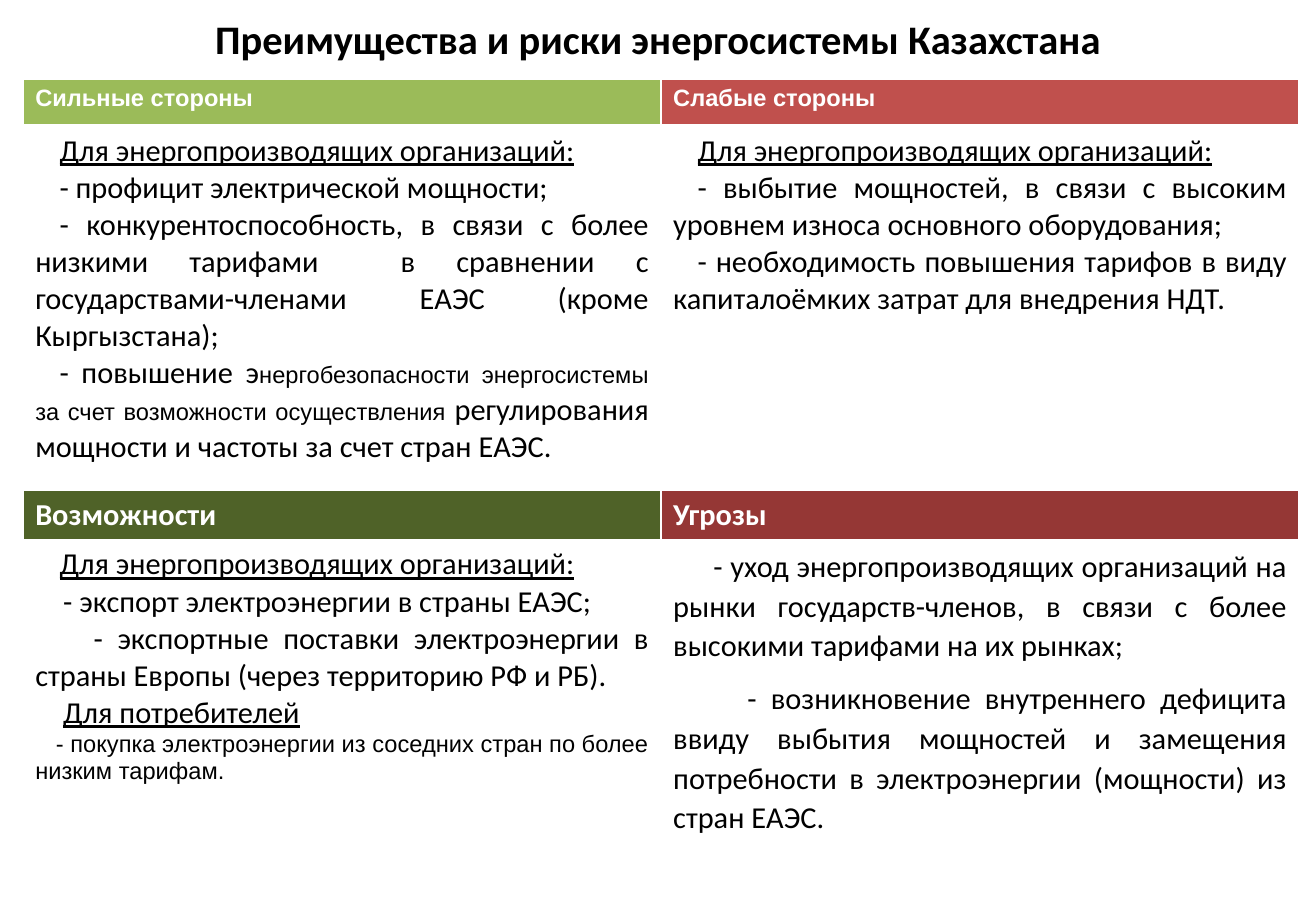
from lxml.etree import SubElement
from pptx import Presentation
from pptx.dml.color import RGBColor
from pptx.enum.text import MSO_ANCHOR, PP_ALIGN
from pptx.oxml.ns import qn
from pptx.util import Pt

EMU_PER_PX = 9144  # 100 px to the inch
WHITE, BLACK = "FFFFFF", "000000"
PRODUCERS = "Для энергопроизводящих организаций:"
SMALL = {"size": 14, "font": "Arial"}
UNDERLINED = {"underline": True}
INDENT = 20


def px(length):
    return int(length * EMU_PER_PX)


def color(hex_string):
    return RGBColor.from_string(hex_string)


def write(paragraph, text, size=18, font="Calibri", fill=BLACK, bold=False, underline=False):
    run = paragraph.add_run()
    run.text = text
    run.font.size = Pt(size)
    run.font.name = font
    run.font.bold = bold
    run.font.underline = underline
    run.font.color.rgb = color(fill)


def space_out(paragraph):
    paragraph.line_spacing = 1.07
    paragraph.space_after = Pt(8)


def style_cell(cell, fill, bottom_width=1):
    # Borders come before the fill in the cell properties
    properties = cell._tc.get_or_add_tcPr()
    for side, width in (("L", 1), ("R", 1), ("T", 1), ("B", bottom_width)):
        border = SubElement(properties, qn(f"a:ln{side}"), w=str(Pt(width)))
        paint = SubElement(border, qn("a:solidFill"))
        SubElement(paint, qn("a:srgbClr"), val=WHITE)
    cell.fill.solid()
    cell.fill.fore_color.rgb = color(fill)


def fill_heading(cell, text, fill, bottom_width=1, **text_format):
    style_cell(cell, fill, bottom_width)
    write(cell.text_frame.paragraphs[0], text, fill=WHITE, bold=True, **text_format)


def fill_points(cell, points, spaced=False):
    style_cell(cell, WHITE)
    frame = cell.text_frame
    for number, (indent, *runs) in enumerate(points):
        point = frame.add_paragraph() if number else frame.paragraphs[0]
        point.alignment = PP_ALIGN.JUSTIFY
        point._p.get_or_add_pPr().set("indent", str(px(indent)))
        if spaced:
            space_out(point)
        for text, text_format in runs:
            write(point, text, **text_format)


# Each point: first-line indent, then its runs
STRENGTHS = [
    (INDENT, (PRODUCERS, UNDERLINED)),
    (INDENT, ("- профицит электрической мощности;", {})),
    (INDENT, ("- конкурентоспособность, в связи с более низкими тарифами  в сравнении с "
              "государствами-членами ЕАЭС (кроме Кыргызстана);", {})),
    (INDENT, ("- повышение э", {}),
     ("нергобезопасности энергосистемы за счет возможности осуществления ", SMALL),
     ("регулирования мощности и частоты за счет стран ЕАЭС.", {})),
]
WEAKNESSES = [
    (INDENT, (PRODUCERS, UNDERLINED)),
    (INDENT, ("- выбытие мощностей, в связи с высоким уровнем износа основного "
              "оборудования;", {})),
    (INDENT, ("- необходимость повышения тарифов в виду капиталоёмких затрат для "
              "внедрения НДТ.", {})),
]
OPPORTUNITIES = [
    (INDENT, (PRODUCERS, UNDERLINED)),
    (23, ("- экспорт электроэнергии в страны ЕАЭС;", {})),
    (48, ("- экспортные поставки электроэнергии в страны Европы "
          "(через территорию РФ и РБ).", {})),
    (23, ("Для потребителей", UNDERLINED)),
    (17, ("- покупка электроэнергии из соседних стран по более низким тарифам.", SMALL)),
]
THREATS = [
    (33, ("- уход энергопроизводящих организаций на рынки государств-членов, в связи с "
          "более высокими тарифами на их рынках;", {})),
    (61, ("- возникновение внутреннего дефицита ввиду выбытия мощностей и замещения "
          "потребности в электроэнергии (мощности) из стран ЕАЭС.", {})),
]


def place_title(slide, left, top, width, height):
    title = slide.shapes.title
    title.left, title.top, title.width, title.height = map(px, (left, top, width, height))
    frame = title.text_frame
    frame.word_wrap = True
    frame.vertical_anchor = MSO_ANCHOR.MIDDLE
    heading = frame.paragraphs[0]
    heading.alignment = PP_ALIGN.CENTER
    space_out(heading)
    write(heading, "Преимущества и риски энергосистемы Казахстана", size=24, bold=True)


def place_swot(slide, left, top, width):
    row_heights = (39, 300, 39, 236, 39)
    swot = slide.shapes.add_table(len(row_heights), 2, px(left), px(top),
                                  px(width), px(sum(row_heights))).table
    swot.first_row = swot.horz_banding = False
    for row, height in zip(swot.rows, row_heights):
        row.height = px(height)

    # Strengths and weaknesses
    fill_heading(swot.cell(0, 0), "Сильные стороны", "9BBB59", bottom_width=3, **SMALL)
    fill_heading(swot.cell(0, 1), "Слабые стороны", "C0504D", bottom_width=3, **SMALL)
    fill_points(swot.cell(1, 0), STRENGTHS)
    fill_points(swot.cell(1, 1), WEAKNESSES)

    # Opportunities and threats
    fill_heading(swot.cell(2, 0), "Возможности", "4F6228")
    fill_heading(swot.cell(2, 1), "Угрозы", "953735")
    fill_points(swot.cell(3, 0), OPPORTUNITIES)
    fill_points(swot.cell(3, 1), THREATS, spaced=True)

    # Empty closing row
    for column in range(2):
        style_cell(swot.cell(4, column), WHITE)


def main():
    deck = Presentation()
    deck.slide_width, deck.slide_height = px(1083), px(750)
    slide = deck.slides.add_slide(deck.slide_layouts[5])
    place_title(slide, 54, 0, 975, 60)
    place_swot(slide, 19, 65, 1050)
    deck.save("out.pptx")


if __name__ == "__main__":
    main()
